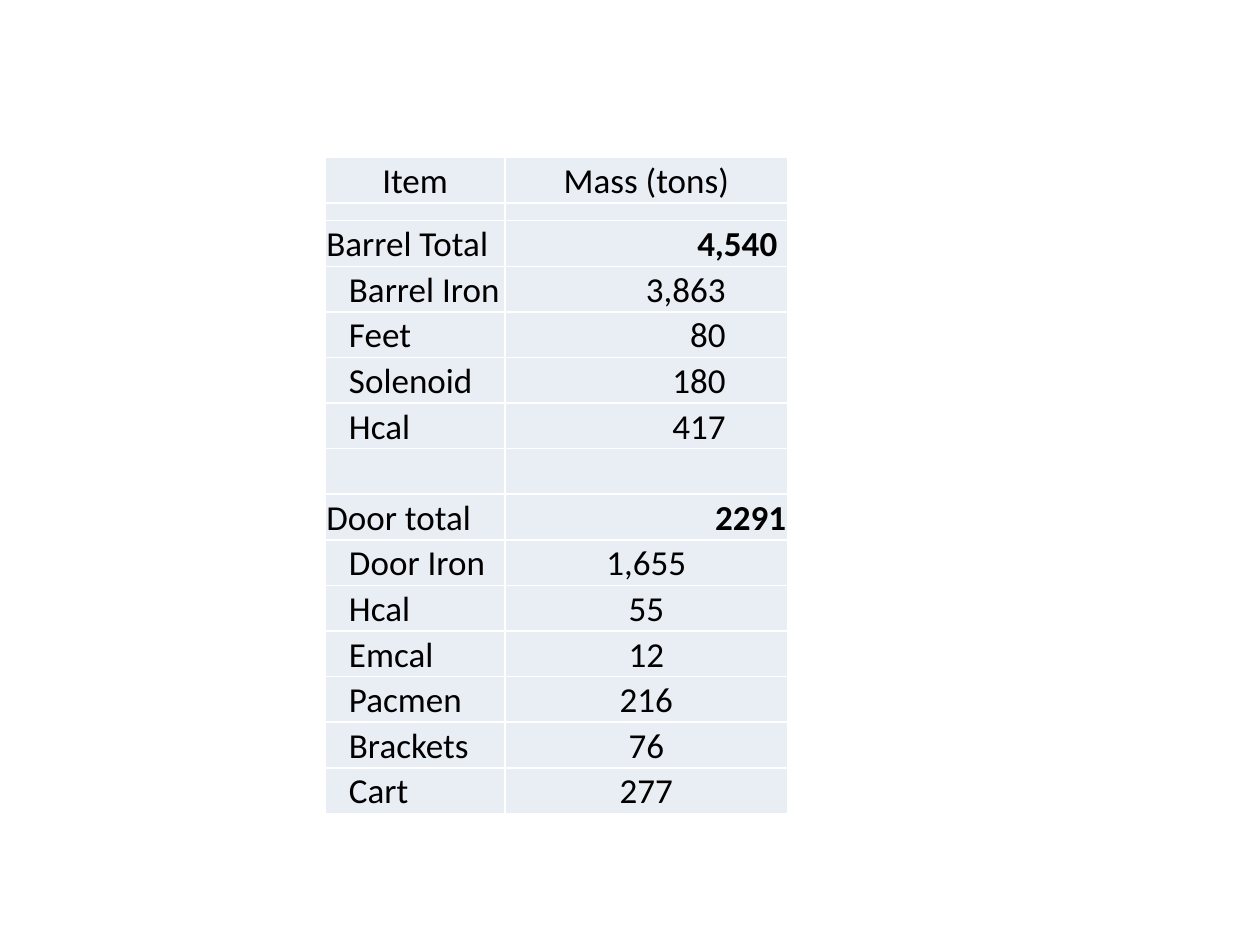
from dataclasses import dataclass

from lxml.etree import SubElement
from pptx import Presentation
from pptx.dml.color import RGBColor
from pptx.enum.text import MSO_ANCHOR as Anchor, PP_ALIGN as Align
from pptx.oxml.ns import qn
from pptx.util import Inches, Pt

SLIDE_WIDTH, SLIDE_HEIGHT = 10, 7.5
LEFT, TOP, HEIGHT = 2.58, 1.25, 5.21
COLUMN_WIDTHS = (1.43, 2.24)
GAP_ROW, GAP_HEIGHT = 1, 0.14
INSET, INDENT = 0.01, 0.19
TEXT, CELL, BORDER = "000000", "E9EDF4", "FFFFFF"


@dataclass
class Entry:
    """One table row: an item and its mass."""
    item: str = ""
    mass: str = ""
    item_align: Align = Align.LEFT
    mass_align: Align = Align.CENTER
    indent: float = INSET
    mass_inset: float = INSET
    bold: bool = False


def total(item: str, mass: str, inset: float) -> Entry:
    return Entry(item, mass, mass_align=Align.RIGHT, mass_inset=inset, bold=True)


def barrel_part(item: str, mass: str) -> Entry:
    return Entry(item, mass, mass_align=Align.RIGHT, indent=INDENT, mass_inset=0.49)


def door_part(item: str, mass: str) -> Entry:
    return Entry(item, mass, indent=INDENT)


ENTRIES = [
    Entry("Item", "Mass (tons)", item_align=Align.CENTER),
    Entry(),
    total("Barrel Total", "4,540", 0.08),
    barrel_part("Barrel Iron", "3,863"),
    barrel_part("Feet", "80"),
    barrel_part("Solenoid", "180"),
    barrel_part("Hcal", "417"),
    Entry(),
    total("Door total", "2291", INSET),
    door_part("Door Iron", "1,655"),
    door_part("Hcal", "55"),
    door_part("Emcal", "12"),
    door_part("Pacmen", "216"),
    door_part("Brackets", "76"),
    door_part("Cart", "277"),
]


def color(value: str) -> RGBColor:
    return RGBColor.from_string(value)


def add_borders(cell) -> None:
    """Draw a thin line on each side; borders must precede the cell fill."""
    properties = cell._tc.get_or_add_tcPr()
    for side in ("a:lnL", "a:lnR", "a:lnT", "a:lnB"):
        line = SubElement(properties, qn(side), w=str(Pt(1)))
        fill = SubElement(line, qn("a:solidFill"))
        SubElement(fill, qn("a:srgbClr"), val=BORDER)


def fill_cell(cell, text: str, align: Align, left: float, right: float,
              bold: bool, size: float) -> None:
    add_borders(cell)
    cell.fill.solid()
    cell.fill.fore_color.rgb = color(CELL)
    cell.vertical_anchor = Anchor.BOTTOM
    cell.margin_left, cell.margin_right = Inches(left), Inches(right)
    cell.margin_top, cell.margin_bottom = Inches(INSET), 0
    para = cell.text_frame.paragraphs[0]
    para.alignment = align
    if text:
        para.add_run().text = text
    else:
        # The end mark sets the height of an empty cell
        SubElement(para._p, qn("a:endParaRPr"), sz=str(int(size * 100)))
    for font in [para.font] + [span.font for span in para.runs]:
        font.name, font.size, font.bold = "Calibri", Pt(size), bold
        font.color.rgb = color(TEXT)


def add_mass_table(slide) -> None:
    frame = slide.shapes.add_table(
        len(ENTRIES), len(COLUMN_WIDTHS), Inches(LEFT), Inches(TOP),
        Inches(sum(COLUMN_WIDTHS)), Inches(HEIGHT))
    table = frame.table
    table.first_row = table.horz_banding = False
    for column, width in zip(table.columns, COLUMN_WIDTHS):
        column.width = Inches(width)
    row_height = (HEIGHT - GAP_HEIGHT) / (len(ENTRIES) - 1)
    for index, entry in enumerate(ENTRIES):
        is_gap = index == GAP_ROW
        table.rows[index].height = Inches(GAP_HEIGHT if is_gap else row_height)
        size = 7 if is_gap else 20
        fill_cell(table.cell(index, 0), entry.item, entry.item_align,
                  entry.indent, INSET, False, size)
        fill_cell(table.cell(index, 1), entry.mass, entry.mass_align,
                  INSET, entry.mass_inset, entry.bold, size)


def main() -> None:
    deck = Presentation()
    deck.slide_width, deck.slide_height = Inches(SLIDE_WIDTH), Inches(SLIDE_HEIGHT)
    slide = deck.slides.add_slide(deck.slide_layouts[6])
    add_mass_table(slide)
    deck.save("out.pptx")


if __name__ == "__main__":
    main()
